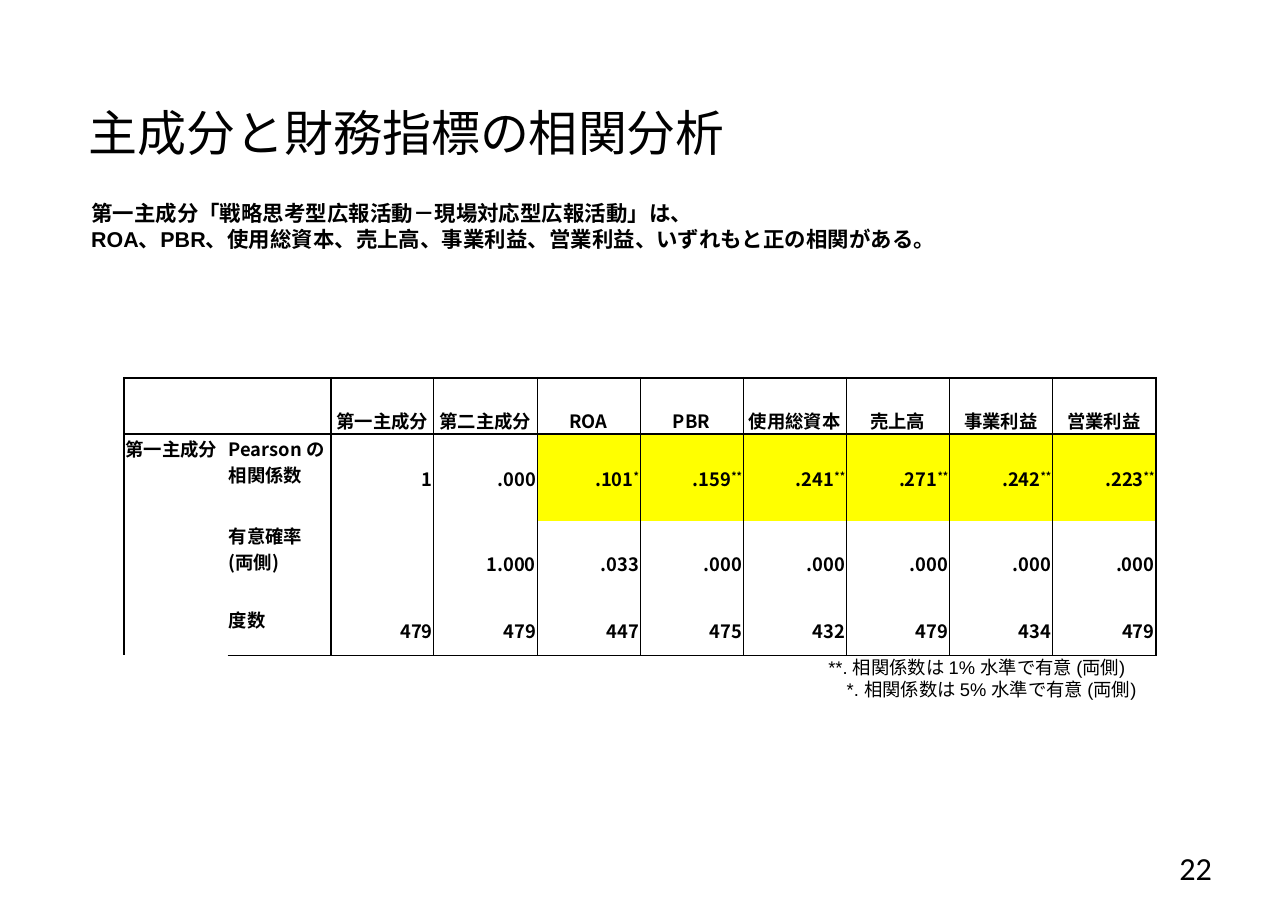
import pptx
import pptx.dml.color
import pptx.enum.text
import pptx.oxml.ns
import pptx.util
from lxml import etree

Inches = pptx.util.Inches
Pt = pptx.util.Pt
Align = pptx.enum.text.PP_ALIGN
Anchor = pptx.enum.text.MSO_ANCHOR
AutoSize = pptx.enum.text.MSO_AUTO_SIZE

TITLE = "主成分と財務指標の相関分析"
SUMMARY = [
    "第一主成分「戦略思考型広報活動－現場対応型広報活動」は、",
    "ROA、PBR、使用総資本、売上高、事業利益、営業利益、いずれもと正の相関がある。",
]
NOTES = ["**. 相関係数は 1% 水準で有意 (両側)", "　*. 相関係数は 5% 水準で有意 (両側)"]
PAGE_NUMBER = "22"

ROWS = [
    ["", "", "第一主成分", "第二主成分", "ROA", "PBR", "使用総資本", "売上高", "事業利益", "営業利益"],
    ["第一主成分", "Pearson の相関係数", "1", ".000", ".101*", ".159**", ".241**", ".271**", ".242**", ".223**"],
    ["", "有意確率 (両側)", "", "1.000", ".033", ".000", ".000", ".000", ".000", ".000"],
    ["", "度数", "479", "479", "447", "475", "432", "479", "434", "479"],
]
ROW_HEIGHTS = [0.51, 0.79, 0.76, 0.46]
TABLE_LEFT, TABLE_TOP, TABLE_WIDTH = 1.13, 3.43, 9.36
LABEL_COLUMNS = 2

BLACK, YELLOW = "000000", "FFFF00"
CJK_FONT = "Noto Sans CJK JP"
THICK, THIN = 1.5, 0.5
# Widths by grid line; a line that is not listed is not drawn.
VERTICAL_LINES = {0: THICK, 2: THICK, 10: THICK} | {line: THIN for line in range(3, 10)}
HORIZONTAL_LINES = {0: THICK, 1: THICK, 4: THIN}


def color(value):
    return pptx.dml.color.RGBColor.from_string(value)


def add_run(paragraph, text, size, font_name, bold=False, superscript=False):
    run = paragraph.add_run()
    run.text = text
    run.font.size = Pt(size)
    run.font.bold = bold
    run.font.name = font_name
    run.font.color.rgb = color(BLACK)
    properties = run.font._element
    etree.SubElement(properties, pptx.oxml.ns.qn("a:ea"), typeface=CJK_FONT)
    if superscript:
        properties.set("baseline", "30000")


def set_margins(frame, horizontal, vertical):
    frame.margin_left = frame.margin_right = Inches(horizontal)
    frame.margin_top = frame.margin_bottom = Inches(vertical)


def add_text(slide, position, lines, size, font_name, bold=False):
    shape = slide.shapes.add_textbox(*map(Inches, position))
    frame = shape.text_frame
    frame.word_wrap = True
    set_margins(frame, 0.1, 0.05)
    for index, line in enumerate(lines):
        paragraph = frame.add_paragraph() if index else frame.paragraphs[0]
        add_run(paragraph, line, size, font_name, bold)
    return frame


def set_borders(cell, widths):
    """Draw left, right, top and bottom borders; a width of None hides one."""
    properties = cell._tc.get_or_add_tcPr()
    for index, (tag, width) in enumerate(zip(("a:lnL", "a:lnR", "a:lnT", "a:lnB"), widths)):
        line = etree.Element(pptx.oxml.ns.qn(tag), w=str(Pt(width or 0)))
        if width:
            fill = etree.SubElement(line, pptx.oxml.ns.qn("a:solidFill"))
            etree.SubElement(fill, pptx.oxml.ns.qn("a:srgbClr"), val=BLACK)
        else:
            etree.SubElement(line, pptx.oxml.ns.qn("a:noFill"))
        properties.insert(index, line)


def format_cell(cell, text, row, column):
    cell.margin_left = cell.margin_right = cell.margin_top = Inches(0.01)
    cell.margin_bottom = 0
    paragraph = cell.text_frame.paragraphs[0]
    if row == 0:
        cell.vertical_anchor = Anchor.BOTTOM
        paragraph.alignment = Align.CENTER
    elif column < LABEL_COLUMNS:
        cell.vertical_anchor = Anchor.TOP
        paragraph.alignment = Align.LEFT
    else:
        cell.vertical_anchor = Anchor.MIDDLE
        paragraph.alignment = Align.RIGHT

    value = text.rstrip("*")
    stars = text[len(value):]
    if value:
        add_run(paragraph, value, 12, CJK_FONT, bold=True)
    if stars:
        add_run(paragraph, stars, 12, CJK_FONT, bold=True, superscript=True)
        cell.fill.solid()
        cell.fill.fore_color.rgb = color(YELLOW)
    else:
        cell.fill.background()
    set_borders(cell, (
        VERTICAL_LINES.get(column), VERTICAL_LINES.get(column + 1),
        HORIZONTAL_LINES.get(row), HORIZONTAL_LINES.get(row + 1),
    ))


def add_correlation_table(slide):
    column_count = len(ROWS[0])
    table = slide.shapes.add_table(
        len(ROWS), column_count, Inches(TABLE_LEFT), Inches(TABLE_TOP),
        Inches(TABLE_WIDTH), Inches(sum(ROW_HEIGHTS)),
    ).table
    table.first_row = table.horz_banding = False
    for column in table.columns:
        column.width = Inches(TABLE_WIDTH / column_count)
    for row, height in zip(table.rows, ROW_HEIGHTS):
        row.height = Inches(height)
    for row, texts in enumerate(ROWS):
        for column, text in enumerate(texts):
            format_cell(table.cell(row, column), text, row, column)
    table.cell(0, 0).merge(table.cell(0, 1))
    table.cell(1, 0).merge(table.cell(3, 0))


def main():
    presentation = pptx.Presentation()
    presentation.slide_width = Inches(11.69)
    presentation.slide_height = Inches(8.27)
    slide = presentation.slides.add_slide(presentation.slide_layouts[5])

    title = slide.shapes.title
    title.left, title.top, title.width, title.height = map(Inches, (0.69, 0.85, 8.12, 0.7))
    frame = title.text_frame
    frame.auto_size = AutoSize.NONE
    frame.vertical_anchor = Anchor.MIDDLE
    set_margins(frame, 0.11, 0.06)
    frame.paragraphs[0].alignment = Align.LEFT
    add_run(frame.paragraphs[0], TITLE, 32, "Calibri")

    add_text(slide, (0.73, 1.77, 10.16, 0.81), SUMMARY, 14, "Arial", bold=True)
    add_text(slide, (7.42, 5.91, 3.07, 0.5), NOTES, 12, "Arial")

    page_frame = add_text(slide, (8.38, 7.66, 2.73, 0.44), [PAGE_NUMBER], 21, "Calibri")
    page_frame.vertical_anchor = Anchor.MIDDLE
    page_frame.paragraphs[0].alignment = Align.RIGHT
    set_margins(page_frame, 0.11, 0.06)

    add_correlation_table(slide)
    presentation.save("out.pptx")


if __name__ == "__main__":
    main()
